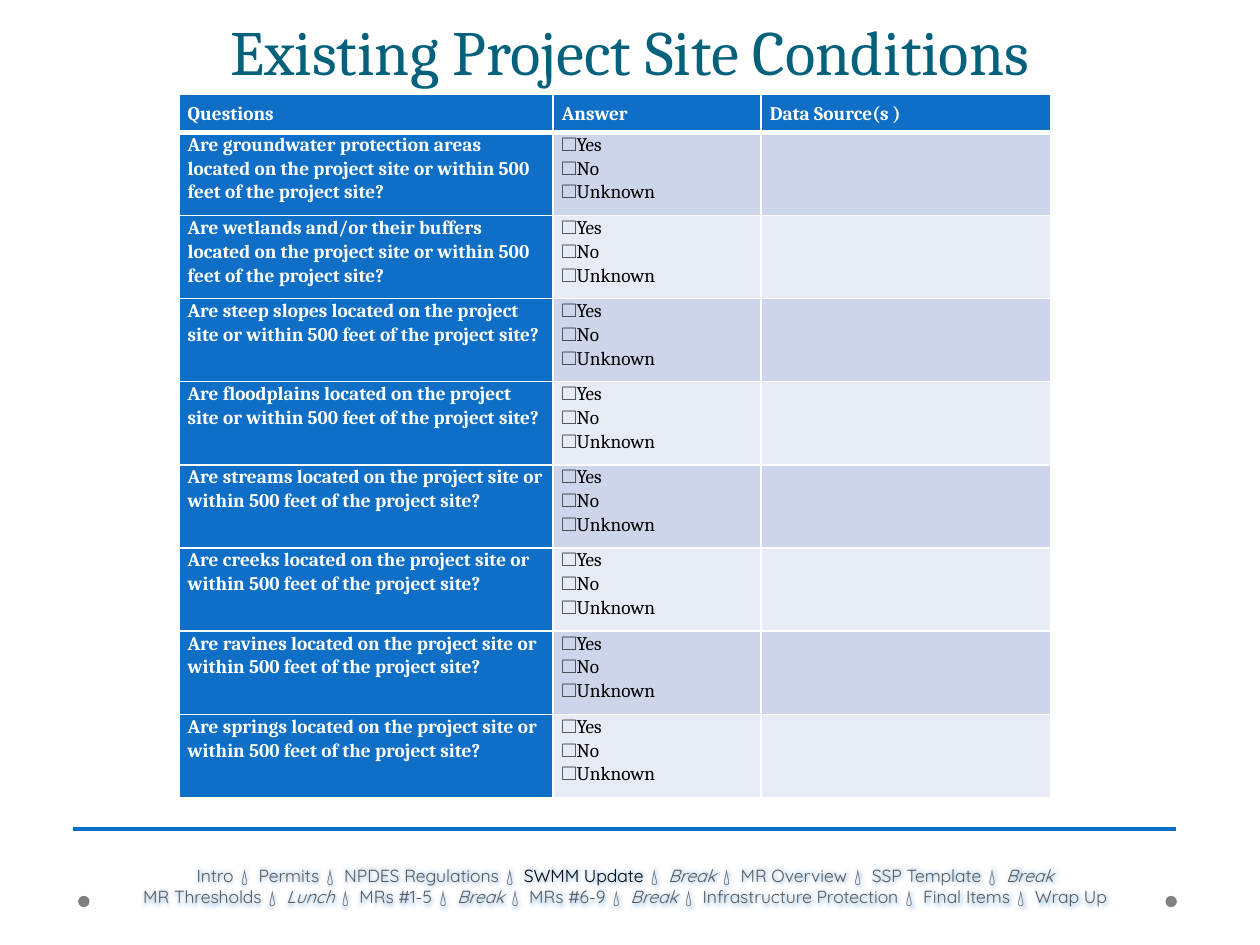
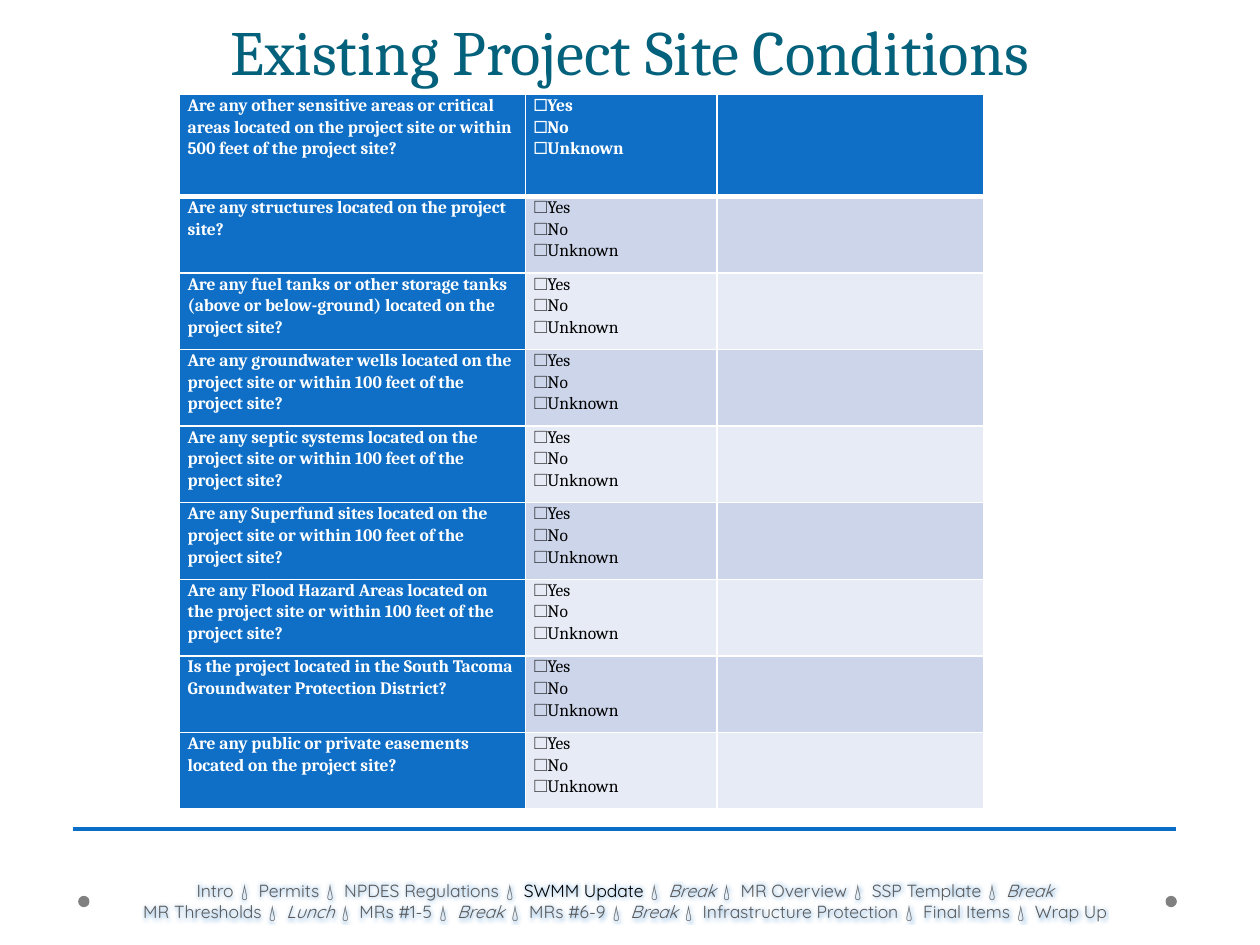
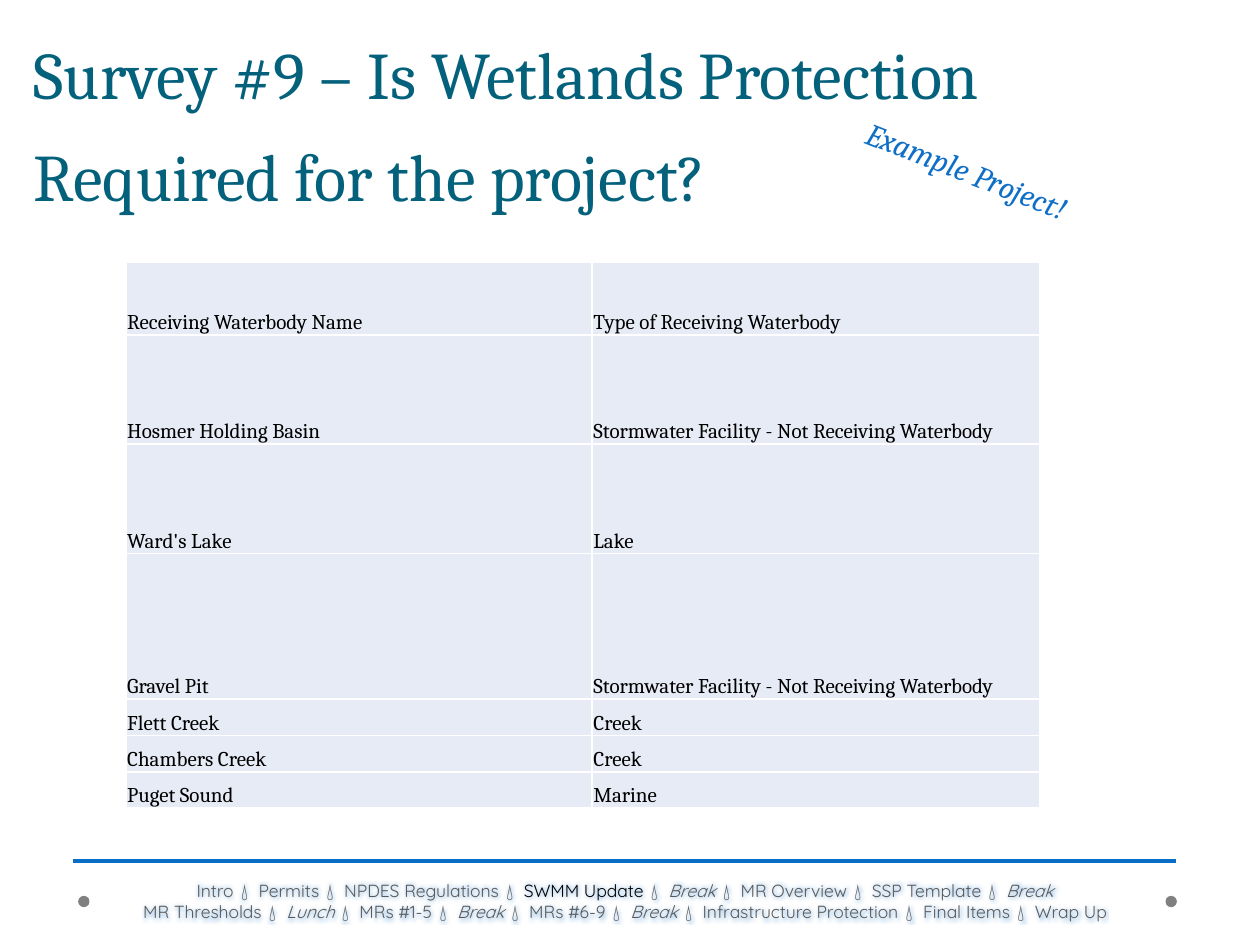
from lxml import etree
from pptx import Presentation
from pptx import util as u
from pptx.dml.color import RGBColor
from pptx.enum import shapes, text
from pptx.oxml import ns

BLUE = RGBColor(0x0F, 0x6F, 0xC6)
RULE_BLUE = RGBColor(0x0A, 0x6D, 0xC6)
TEAL = RGBColor(0x04, 0x61, 0x7B)
BAND_DARK = RGBColor(0xCC, 0xD5, 0xEA)
BAND_LIGHT = RGBColor(0xE7, 0xEB, 0xF5)
WHITE = RGBColor(0xFF, 0xFF, 0xFF)
BLACK = RGBColor(0, 0, 0)
GRAY = RGBColor(0x80, 0x80, 0x80)
FOOTER_GRAY = RGBColor(0x59, 0x59, 0x59)

SERIF = "Cambria"
TITLE = {"name": SERIF, "size": u.Pt(36), "color": TEAL}
AGENDA = {"name": "Quicksand", "size": u.Pt(10), "color": FOOTER_GRAY}
TOP, MIDDLE, BOTTOM = (text.MSO_ANCHOR.TOP, text.MSO_ANCHOR.MIDDLE,
                       text.MSO_ANCHOR.BOTTOM)
CENTER = text.PP_ALIGN.CENTER

QUESTION_INSETS = (0.07, 0, 0.07, 0)
WATERBODY_INSETS = (0.01, 0.01, 0.01, 0)
CHOICES = "☐Yes\n☐No\n☐Unknown"
NEAR_500 = "located on the project site or within 500 feet of the project site?"
NEAR_100 = "located on the project site or within 100 feet of the project site?"
CONDITIONS_TITLE = "Existing Project Site Conditions"

NATURAL_AREAS = [f"Are {area} {NEAR_500}" for area in (
    "groundwater protection areas", "wetlands and/or their buffers",
    "steep slopes", "floodplains", "streams", "creeks", "ravines", "springs")]
SENSITIVE_AREAS = f"Are any other sensitive areas or critical areas {NEAR_500}"
BUILT_AREAS = [
    "Are any structures located on the project site?",
    "Are any fuel tanks or other storage tanks (above or below-ground) "
    "located on the project site?",
    *(f"Are any {area} {NEAR_100}" for area in (
        "groundwater wells", "septic systems", "Superfund sites",
        "Flood Hazard Areas")),
    "Is the project located in the South Tacoma Groundwater Protection District?",
    "Are any public or private easements located on the project site?",
]
FACILITY = "Stormwater Facility - Not Receiving Waterbody"
WATERBODIES = [
    ("Receiving Waterbody Name", "Type of Receiving Waterbody", 2),
    ("Hosmer Holding Basin", FACILITY, 3),
    ("Ward's Lake", "Lake", 3),
    ("Gravel Pit", FACILITY, 4),
    ("Flett Creek", "Creek", 1),
    ("Chambers Creek", "Creek", 1),
    ("Puget Sound", "Marine", 1),
]
AGENDA_LINES = [
    ["Intro", "Permits", "NPDES Regulations", "SWMM Update", "Break",
     "MR Overview", "SSP Template", "Break"],
    ["MR Thresholds", "Lunch", "MRs #1-5", "Break", "MRs #6-9", "Break",
     "Infrastructure Protection", "Final Items", "Wrap Up"],
]
CURRENT_TOPIC = "SWMM Update"
PAUSES = ("Break", "Lunch")


def apply(target, values):
    """Set attributes from a dict of format values."""
    for name, value in values.items():
        if name == "color":
            target.color.rgb = value
        else:
            setattr(target, name, value)


def set_insets(target, insets):
    """Set the left, top, right and bottom margins in inches."""
    sides = ("left", "top", "right", "bottom")
    apply(target, {f"margin_{side}": u.Inches(inset)
                   for side, inset in zip(sides, insets)})


def add_span(para, words, style):
    """Append a formatted run to a paragraph."""
    span = para.add_run()
    span.text = words
    apply(span.font, style)
    return span


def add_text_box(page, box, **frame_format):
    """Add an empty text box and return it."""
    holder = page.shapes.add_textbox(*map(u.Inches, box))
    apply(holder.text_frame, {"word_wrap": True, **frame_format})
    return holder


def add_title(page, box, words, style=TITLE, align=CENTER):
    """Add the slide title, resting on the bottom of its box."""
    holder = add_text_box(page, box, vertical_anchor=BOTTOM)
    para = holder.text_frame.paragraphs[0]
    apply(para, {"alignment": align, "line_spacing": u.Pt(58)})
    add_span(para, words, style)


def add_dots(page):
    """Add the small dots in the bottom corners."""
    for left in (0.62, 9.25):
        dot = page.shapes.add_shape(
            shapes.MSO_SHAPE.OVAL, *map(u.Inches, (left, 7.11, 0.09, 0.09)))
        dot.shadow.inherit = False
        dot.fill.solid()
        dot.fill.fore_color.rgb = GRAY
        dot.line.fill.background()


def add_rule(page, top):
    """Add the line above the footer."""
    rule = page.shapes.add_connector(
        shapes.MSO_CONNECTOR.STRAIGHT,
        *map(u.Inches, (0.58, top, 9.33, top)))
    rule.line.color.rgb = RULE_BLUE
    rule.line.width = u.Pt(2.25)
    etree.SubElement(rule._element.spPr, ns.qn("a:effectLst"))


def add_glow(span):
    """Give a run a soft blue glow."""
    effects = etree.Element(ns.qn("a:effectLst"))
    glow = etree.SubElement(effects, ns.qn("a:glow"), rad="63500")
    color = etree.SubElement(glow, ns.qn("a:srgbClr"), val=str(BLUE))
    etree.SubElement(color, ns.qn("a:alpha"), val="40000")
    span.font._element.find(ns.qn("a:solidFill")).addnext(effects)


def add_agenda(page, top):
    """Add the two-line agenda with the current topic in black."""
    holder = add_text_box(page, (0.72, top, 8.53, 0.4), vertical_anchor=MIDDLE)
    set_insets(holder.text_frame, (0.05, 0.05, 0.1, 0.05))
    para = holder.text_frame.paragraphs[0]
    para.alignment = CENTER
    for number, topics in enumerate(AGENDA_LINES):
        if number:
            para.add_line_break()
        for position, topic in enumerate(topics):
            if position:
                drop = add_span(para, " 💧 ", AGENDA)
                drop.font._element.set("spc", "170")
                add_glow(drop)
            color = BLACK if topic == CURRENT_TOPIC else FOOTER_GRAY
            add_glow(add_span(para, topic, {
                **AGENDA, "color": color, "italic": topic in PAUSES}))


def add_borders(cell, bottom_width=1):
    """Draw white borders around a cell."""
    properties = cell._tc.get_or_add_tcPr()
    widths = {"L": 1, "R": 1, "T": 1, "B": bottom_width}
    for side, width in widths.items():
        line = etree.SubElement(properties, ns.qn(f"a:ln{side}"),
                                w=str(u.Pt(width)))
        fill = etree.SubElement(line, ns.qn("a:solidFill"))
        etree.SubElement(fill, ns.qn("a:srgbClr"), val=str(WHITE))


def fill_cell(cell, words, fill, style, insets, anchor, spacing=None,
              bottom_width=1):
    """Write and format one table cell."""
    add_borders(cell, bottom_width)
    cell.fill.solid()
    cell.fill.fore_color.rgb = fill
    cell.vertical_anchor = anchor
    set_insets(cell, insets)
    cell.text = words
    for para in cell.text_frame.paragraphs:
        para.line_spacing = spacing
        apply(para.font, style)
        for span in para.runs:
            apply(span.font, style)


def add_grid(page, left, top, widths, heights):
    """Add an unbanded table with the given column widths and row heights."""
    box = (left, top, sum(widths), sum(heights))
    table = page.shapes.add_table(
        len(heights), len(widths), *map(u.Inches, box)).table
    apply(table, {"first_row": False, "horz_banding": False})
    for column, width in zip(table.columns, widths):
        column.width = u.Inches(width)
    for row, height in zip(table.rows, heights):
        row.height = u.Inches(height)
    return table


def add_question_table(page, widths, header_height, row_height, header,
                       questions, size, header_anchor):
    """Add a checklist with a blue heading row and question column."""
    heights = [header_height] + [row_height] * len(questions)
    table = add_grid(page, 1.42, 0.75, widths, heights)
    rows = [header] + [(question, CHOICES, "") for question in questions]
    for r, row in enumerate(rows):
        for c, words in enumerate(row):
            heading = r == 0 or c == 0
            band = BAND_DARK if r % 2 else BAND_LIGHT
            style = {"name": SERIF, "size": u.Pt(size), "bold": heading,
                     "color": WHITE if heading else BLACK}
            fill_cell(table.cell(r, c), words, BLUE if heading else band,
                      style, QUESTION_INSETS, TOP if r else header_anchor,
                      1.07, 1 if r else 3)


def add_waterbody_table(page, left, top, unit=0.289):
    """Add the waterbody table, with row heights in multiples of a unit."""
    heights = [unit * units for _, _, units in WATERBODIES]
    table = add_grid(page, left, top, (3.7, 3.55), heights)
    style = {"name": SERIF, "size": u.Pt(12), "color": BLACK}
    for r, (name, kind, _) in enumerate(WATERBODIES):
        for c, words in enumerate((name, kind)):
            fill_cell(table.cell(r, c), words, BAND_LIGHT, style,
                      WATERBODY_INSETS, BOTTOM)


def add_example_tag(page, box):
    """Add the slanted example label."""
    holder = add_text_box(page, box, word_wrap=False)
    holder.rotation = 21.5
    add_span(holder.text_frame.paragraphs[0], "Example Project!",
             {"name": SERIF, "size": u.Pt(18), "color": BLUE, "italic": True})


def add_page(deck, rule_top, agenda_top):
    """Add a blank slide with the shared dots, rule and agenda."""
    page = deck.slides.add_slide(deck.slide_layouts[6])
    add_dots(page)
    add_rule(page, rule_top)
    add_agenda(page, agenda_top)
    return page


def add_conditions_page(deck, agenda_top, **table_format):
    """Add a slide with a site conditions checklist."""
    page = add_page(deck, 6.58, agenda_top)
    add_title(page, (0.5, 0, 9, 0.75), CONDITIONS_TITLE)
    add_question_table(page, **table_format)


def add_survey_page(deck):
    """Add the wetlands survey slide."""
    page = add_page(deck, 6.83, 6.95)
    add_title(page, (0.17, 0, 8.75, 1.75),
              "Survey #9 – Is Wetlands Protection Required for the project?",
              {**TITLE, "size": u.Pt(38)}, text.PP_ALIGN.LEFT)
    add_waterbody_table(page, 1, 2.08)
    add_example_tag(page, (6.73, 1.17, 1.98, 0.4))


def main():
    """Build and save the deck."""
    deck = Presentation()
    apply(deck, {"slide_width": u.Inches(10), "slide_height": u.Inches(7.5)})
    add_conditions_page(
        deck, 6.83, widths=(2.97, 1.65, 2.3), header_height=0.3,
        row_height=0.66, header=("Questions", "Answer", "Data Source(s )"),
        questions=NATURAL_AREAS, size=11, header_anchor=MIDDLE)
    add_conditions_page(
        deck, 6.95, widths=(2.75, 1.52, 2.12), header_height=0.81,
        row_height=4.86 / len(BUILT_AREAS),
        header=(SENSITIVE_AREAS, CHOICES, ""),
        questions=BUILT_AREAS, size=10, header_anchor=TOP)
    add_survey_page(deck)
    deck.save("out.pptx")


if __name__ == "__main__":
    main()
